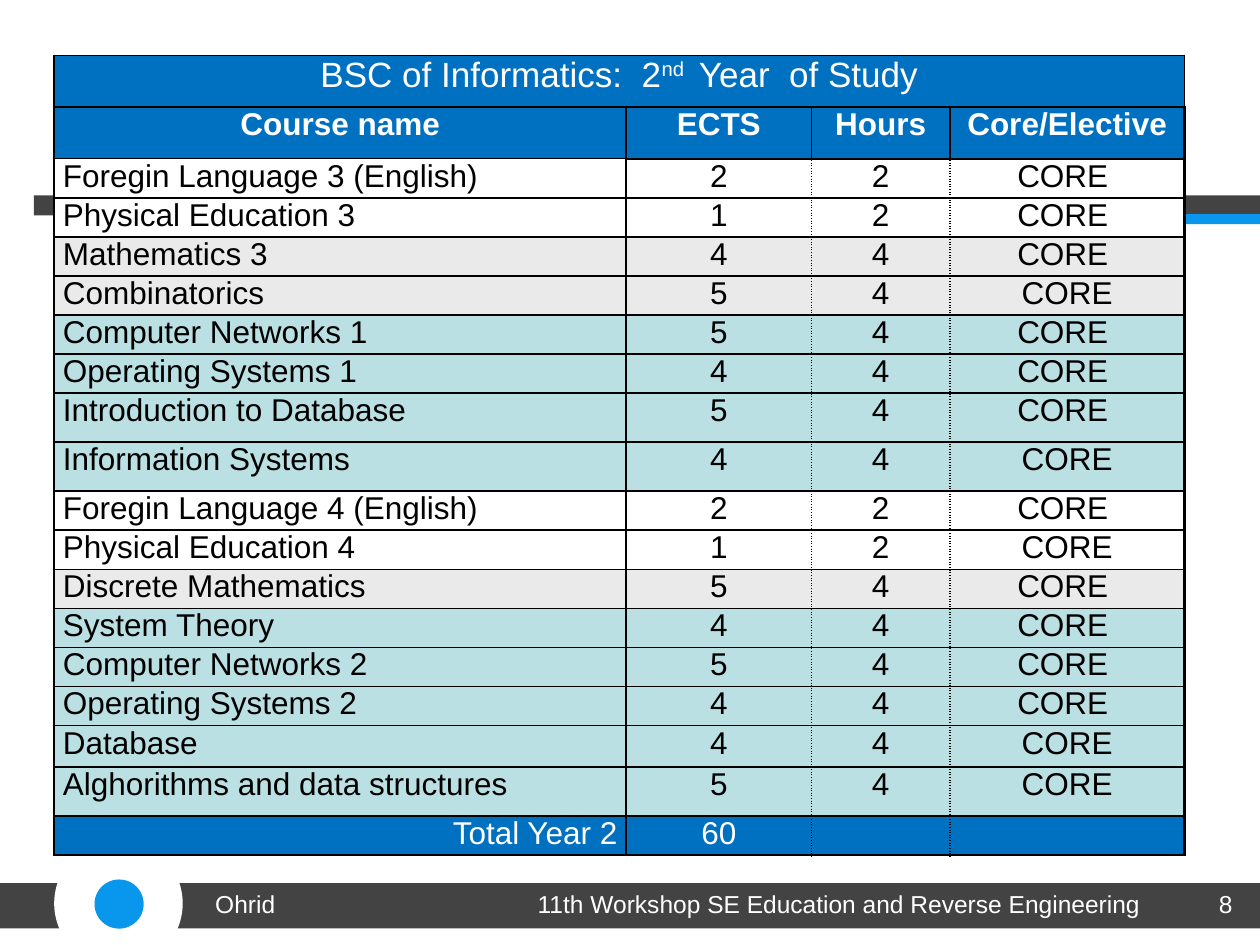
from lxml.etree import SubElement
from pptx import Presentation
from pptx.dml.color import RGBColor
from pptx.enum.shapes import MSO_SHAPE
from pptx.enum.text import PP_ALIGN
from pptx.oxml.ns import qn
from pptx.util import Inches, Pt

COLORS = {
    "dark": "434343", "accent": "0996ED", "white": "FFFFFF", "black": "000000",
    "header": "0070C0", "grey": "EAEAEA", "teal": "BBE0E3",
}
FONT = "Arial"
TITLE = [("BSC of Informatics:  2", False), ("nd ", True), (" Year  of Study", False)]
HEADINGS = ("Course name", "ECTS", "Hours", "Core/Elective")
COURSES = [
    ("white", "Foregin Language 3 (English)", 2, 2, "CORE "),
    ("white", "Physical Education 3", 1, 2, "CORE "),
    ("grey", "Mathematics 3", 4, 4, "CORE "),
    ("grey", "Combinatorics", 5, 4, "CORE"),
    ("teal", "Computer Networks 1", 5, 4, "CORE "),
    ("teal", "Operating Systems 1", 4, 4, "CORE "),
    ("teal", "Introduction to Database", 5, 4, "CORE "),
    ("teal", "Information Systems", 4, 4, "CORE"),
    (None, "Foregin Language 4 (English)", 2, 2, "CORE "),
    (None, "Physical Education 4", 1, 2, "CORE"),
    ("grey", "Discrete Mathematics", 5, 4, "CORE "),
    ("teal", "System Theory", 4, 4, "CORE "),
    ("teal", "Computer Networks 2", 5, 4, "CORE "),
    ("teal", "Operating Systems 2", 4, 4, "CORE "),
    ("teal", "Database", 4, 4, "CORE"),
    ("teal", "Alghorithms and data structures", 5, 4, "CORE"),
]
TOTAL = ("Total Year 2", "60", "", "")
COL_WIDTHS = (4.54, 1.47, 1.1, 1.86)
ROW_HEIGHT = 0.31
TALL_ROWS = {0: 0.41, 1: 0.41, 8: 0.39, 9: 0.39, 16: 0.33, 17: 0.39}
THICK_EDGES = (2, 17, 18, 19)  # horizontal rules, counted from the table top


def rgb(name):
    return RGBColor.from_string(COLORS[name])


def style_run(r, size, color, bold=False):
    r.font.name, r.font.size, r.font.bold = FONT, Pt(size), bold
    r.font.color.rgb = rgb(color)


def add_block(slide, kind, color, left, top, width, height):
    sp = slide.shapes.add_shape(
        kind, Inches(left), Inches(top), Inches(width), Inches(height))
    sp.shadow.inherit = False
    sp.fill.solid()
    sp.fill.fore_color.rgb = rgb(color)
    sp.line.fill.background()


def add_footer_text(slide, text, left, width, align):
    box = slide.shapes.add_textbox(
        Inches(left), Inches(7.01), Inches(width), Inches(0.52))
    tf = box.text_frame
    tf.word_wrap = True
    p = tf.paragraphs[0]
    p.text, p.alignment = text, align
    style_run(p.runs[0], 14, "white")


def set_borders(cell, row, col):
    """Draw dotted inner rules below the headings and a heavy right edge."""
    def edge_width(edge):
        return 1.5 if col and edge in THICK_EDGES else 1

    body = row > 1
    borders = {
        "a:lnL": (1, body and col > 1),
        "a:lnR": (2.25 if row and col == 3 else 1, body and col in (1, 2)),
        "a:lnT": (edge_width(row), False),
        "a:lnB": (edge_width(row + 1), False),
    }
    tc_pr = cell._tc.get_or_add_tcPr()
    for tag, (width, dotted) in borders.items():
        ln = SubElement(tc_pr, qn(tag), w=str(Pt(width)))
        fill = SubElement(ln, qn("a:solidFill"))
        SubElement(fill, qn("a:srgbClr"), val=COLORS["black"])
        SubElement(ln, qn("a:prstDash"), val="sysDot" if dotted else "solid")


def format_cell(cell, row, col, fill):
    set_borders(cell, row, col)
    cell.margin_left = cell.margin_right = Inches(0.07)
    cell.margin_top = cell.margin_bottom = 0
    if fill:
        cell.fill.solid()
        cell.fill.fore_color.rgb = rgb(fill)
    else:
        cell.fill.background()


def fill_row(table, row, fill, values, name_align, color="black", bold=False):
    for col, value in enumerate(values):
        cell = table.cell(row, col)
        format_cell(cell, row, col, fill)
        p = cell.text_frame.paragraphs[0]
        p.text = str(value)
        p.alignment = PP_ALIGN.CENTER if col else name_align
        for r in p.runs:
            style_run(r, 18, color, bold)


def fill_title_row(table):
    for col in range(len(COL_WIDTHS)):
        format_cell(table.cell(0, col), 0, col, "header")
    table.cell(0, 0).merge(table.cell(0, len(COL_WIDTHS) - 1))
    p = table.cell(0, 0).text_frame.paragraphs[0]
    p.alignment = PP_ALIGN.CENTER
    for text, superscript in TITLE:
        r = p.add_run()
        r.text = text
        style_run(r, 20, "white")
        if superscript:
            r._r.get_or_add_rPr().set("baseline", "30000")


def add_course_table(slide):
    rows = len(COURSES) + 3
    heights = [TALL_ROWS.get(i, ROW_HEIGHT) for i in range(rows)]
    table = slide.shapes.add_table(
        rows, len(COL_WIDTHS), Inches(0.43), Inches(0.44),
        Inches(sum(COL_WIDTHS)), Inches(sum(heights))).table
    table.first_row = table.horz_banding = False
    for column, width in zip(table.columns, COL_WIDTHS):
        column.width = Inches(width)
    for row, height in zip(table.rows, heights):
        row.height = Inches(height)

    fill_title_row(table)
    fill_row(table, 1, "header", HEADINGS, PP_ALIGN.CENTER, "white", bold=True)
    for row, (fill, *values) in enumerate(COURSES, start=2):
        fill_row(table, row, fill, values, PP_ALIGN.JUSTIFY)
    fill_row(table, rows - 1, "header", TOTAL, PP_ALIGN.RIGHT, "white")


def add_decoration(slide):
    rect, oval = MSO_SHAPE.RECTANGLE, MSO_SHAPE.OVAL
    add_block(slide, rect, "dark", 1.38, 7.01, 8.62, 0.36)
    add_block(slide, rect, "dark", 0, 7.01, 0.51, 0.36)
    add_block(slide, oval, "white", 0.43, 6.66, 1.02, 1.02)
    add_block(slide, oval, "accent", 0.75, 6.98, 0.39, 0.39)
    add_block(slide, rect, "dark", 0.27, 1.55, 9.73, 0.16)
    add_block(slide, rect, "accent", 0.43, 1.7, 9.57, 0.08)


def main():
    prs = Presentation()
    prs.slide_width, prs.slide_height = Inches(10), Inches(7.5)
    slide = prs.slides.add_slide(prs.slide_layouts[6])
    add_decoration(slide)
    add_footer_text(slide, "8", 9.33, 0.55, PP_ALIGN.RIGHT)
    add_course_table(slide)
    add_footer_text(slide, "Ohrid", 1.61, 2.76, PP_ALIGN.LEFT)
    add_footer_text(slide, "11th Workshop SE Education and Reverse Engineering",
                    3.98, 5.36, PP_ALIGN.CENTER)
    prs.save("out.pptx")


if __name__ == "__main__":
    main()
